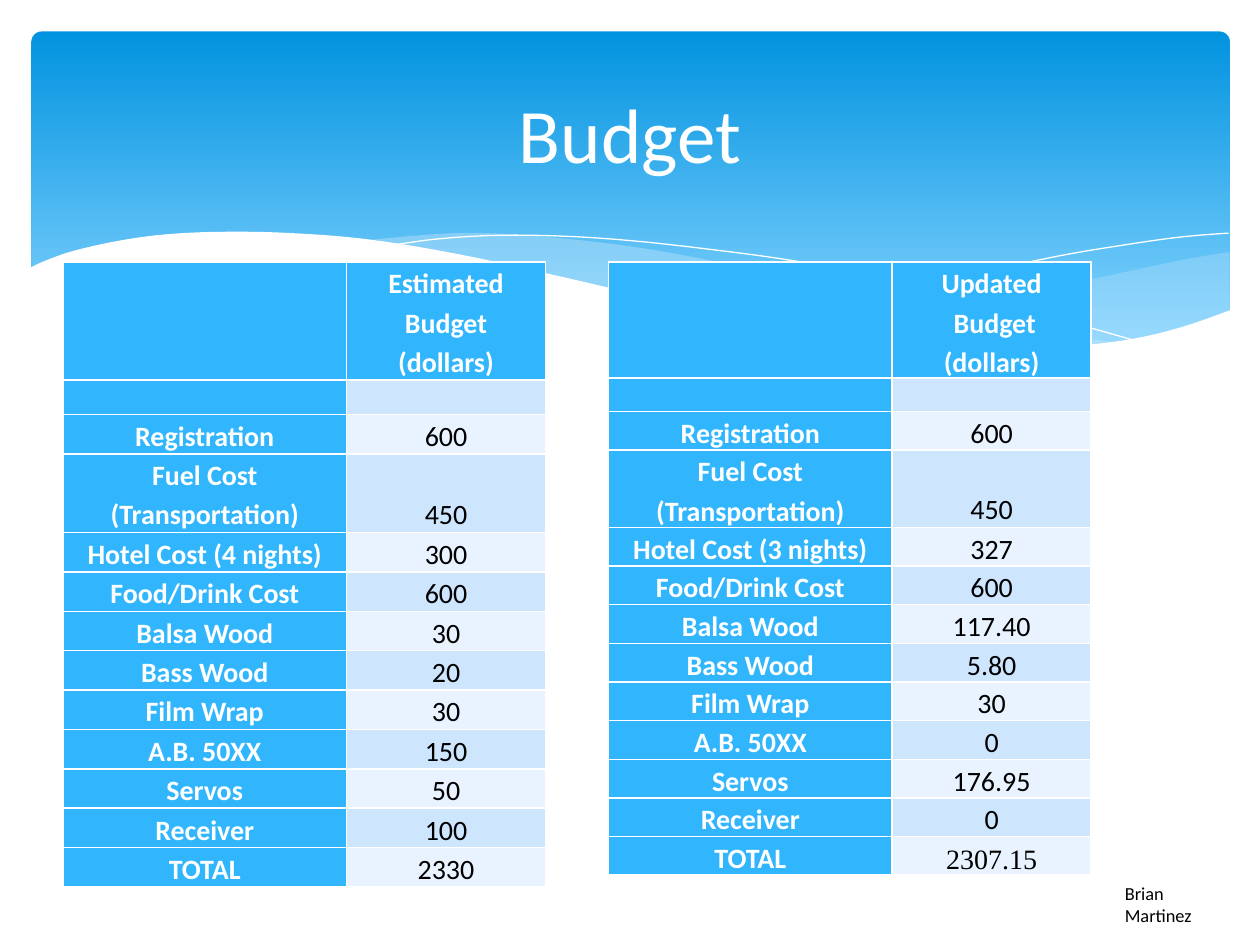
from lxml import etree
from pptx import Presentation
from pptx.dml.color import RGBColor
from pptx.enum.shapes import MSO_SHAPE
from pptx.enum.text import MSO_ANCHOR, PP_ALIGN
from pptx.oxml.ns import qn
from pptx.util import Inches, Pt

ROUNDED = MSO_SHAPE.ROUNDED_RECTANGLE
MIDDLE, BOTTOM, TOP = MSO_ANCHOR.MIDDLE, MSO_ANCHOR.BOTTOM, MSO_ANCHOR.TOP
LEFT, CENTER = PP_ALIGN.LEFT, PP_ALIGN.CENTER

COLORS = {
    "white": "FFFFFF", "black": "000000",
    "banner_top": "0293E0", "banner_bottom": "83D3FE", "wave": "C6E7FC",
    "label": "31B6FD", "odd_row": "CEE5FE", "even_row": "E8F3FF",
}

# Points, in inches, that the smooth edges of the waves pass through.
RIGHT_WAVE = [
    [(9.76, 2), (9.35, 2.07), (8.61, 2.23), (7.53, 2.48), (6.61, 2.65)],
    [(6.61, 2.65), (7.19, 2.72), (7.69, 2.77), (8.14, 2.78), (8.63, 2.75),
     (9.13, 2.67), (9.49, 2.57), (9.76, 2.47)],
]
MIDDLE_WAVE = [
    [(8.93, 2.73), (8.07, 2.6), (7.06, 2.4), (6.29, 2.22), (5.55, 2.05),
     (4.89, 1.94), (4.2, 1.87), (3.61, 1.85), (2.86, 1.91)],
    [(2.86, 1.91), (3.62, 2.03), (4.49, 2.22), (5.66, 2.48), (6.5, 2.64),
     (7.22, 2.74), (7.85, 2.78), (8.38, 2.78), (8.93, 2.73)],
]
WHITE_WAVE = [
    [(9.77, 2.46), (9.4, 2.59), (8.99, 2.69), (8.5, 2.75), (8.09, 2.77),
     (7.61, 2.75), (6.88, 2.68), (6.03, 2.54), (5.29, 2.39), (4.47, 2.2),
     (3.65, 2.02), (2.92, 1.9), (2.3, 1.85), (1.77, 1.84), (1.32, 1.86),
     (0.95, 1.91), (0.59, 1.99), (0.36, 2.07), (0.23, 2.13)],
    [(0.23, 3.29), (9.77, 3.29)],
]
LONG_LINE = [
    [(3.09, 1.95), (3.44, 1.9), (3.87, 1.87), (4.33, 1.87), (4.89, 1.9),
     (5.56, 1.97), (6.36, 2.08), (7.27, 2.26), (8.31, 2.51), (9.07, 2.72)],
]
RIGHT_LINE = [
    [(6.13, 2.57), (6.72, 2.41), (7.48, 2.23), (8.36, 2.04), (8.95, 1.94),
     (9.38, 1.88), (9.75, 1.85)],
]

ITEMS = ["Registration", "Fuel Cost (Transportation)", "Hotel Cost ({} nights)",
         "Food/Drink Cost", "Balsa Wood", "Bass Wood", "Film Wrap", "A.B. 50XX",
         "Servos", "Receiver", "TOTAL"]
ESTIMATED = ["600", "450", "300", "600", "30", "20", "30", "150", "50", "100", "2330"]
UPDATED = ["600", "450", "327", "600", "117.40", "5.80", "30", "0", "176.95", "0",
           "2307.15"]


def rgb(name):
    return RGBColor.from_string(COLORS[name])


def set_attributes(target, values):
    for name, value in values.items():
        setattr(target, name, value)


def write_text(text_frame, text, size, color, bold=False, font="Calibri",
               align=LEFT, spacing=None):
    """Fill a text frame, one paragraph for each line of the text."""
    for index, line in enumerate(text.split("\n")):
        paragraph = text_frame.add_paragraph() if index else text_frame.paragraphs[0]
        set_attributes(paragraph, {"alignment": align, "line_spacing": spacing})
        if line:
            run = paragraph.add_run()
            run.text = line
            set_attributes(run.font, {"size": Pt(size), "bold": bold, "name": font})
            run.font.color.rgb = rgb(color)
        else:
            # An empty cell keeps the line height of its neighbours.
            etree.SubElement(paragraph._p, qn("a:endParaRPr"), sz=str(size * 100))


def add_text(slide, box, text, size, color, anchor=TOP, align=LEFT):
    text_frame = slide.shapes.add_textbox(*map(Inches, box)).text_frame
    set_attributes(text_frame, {"word_wrap": True, "vertical_anchor": anchor})
    write_text(text_frame, text, size, color, align=align)


def smooth(knots, steps=6):
    """Return points of a Catmull-Rom curve through the knots."""
    if len(knots) < 3:
        return knots
    padded = [knots[0], *knots, knots[-1]]
    points = [knots[0]]
    for a, b, c, d in zip(padded, padded[1:], padded[2:], padded[3:]):
        for step in range(1, steps + 1):
            t = step / steps
            points.append(tuple(
                q + t / 2 * (r - p + t * (2 * p - 5 * q + 4 * r - s
                                          + t * (3 * q - p - 3 * r + s)))
                for p, q, r, s in zip(a, b, c, d)))
    return points


def add_curve(slide, edges, fill=None, opacity=100):
    """Draw a filled wave, or a white hairline if no fill is given."""
    points = [(Inches(x), Inches(y)) for edge in edges for x, y in smooth(edge)]
    builder = slide.shapes.build_freeform(*points[0])
    builder.add_line_segments(points[1:], close=fill is not None)
    shape = builder.convert_to_shape()
    shape.shadow.inherit = False
    if fill is None:
        shape.fill.background()
        shape.line.color.rgb = rgb("white")
        shape.line.width = Pt(0)
        return
    shape.line.fill.background()
    shape.fill.solid()
    shape.fill.fore_color.rgb = rgb(fill)
    if opacity < 100:
        color = shape._element.spPr.find(qn("a:solidFill"))[0]
        etree.SubElement(color, qn("a:alpha"), val=str(opacity * 1000))


def add_banner(slide, box):
    banner = slide.shapes.add_shape(ROUNDED, *map(Inches, box))
    banner.shadow.inherit = False
    banner.adjustments[0] = 0.03
    banner.line.fill.background()
    banner.fill.gradient()
    banner.fill.gradient_angle = 270
    stops = [(0, "banner_top"), (0.9, "banner_bottom")]
    for stop, (position, color) in zip(banner.fill.gradient_stops, stops):
        stop.position = position
        stop.color.rgb = rgb(color)
    add_curve(slide, RIGHT_WAVE, "wave", 29)
    add_curve(slide, MIDDLE_WAVE, "wave", 40)
    add_curve(slide, LONG_LINE)
    add_curve(slide, RIGHT_LINE)
    add_curve(slide, WHITE_WAVE, "white")


def add_budget_table(slide, box, heading, nights, amounts, row_height,
                     total_font="Calibri"):
    labels = [item.format(nights) for item in ITEMS]
    rows = [("", heading), ("", ""), *zip(labels, amounts)]
    frame = slide.shapes.add_table(len(rows), 2, *map(Inches, box))
    table = frame.table
    table.horz_banding = False
    for column, width in zip(table.columns, (2.25, 1.58)):
        column.width = Inches(width)
    lines = {0: 3.15, 3: 2.08}
    for row_index, row in enumerate(rows):
        table.rows[row_index].height = Inches(row_height * lines.get(row_index, 1))
        for column_index, text in enumerate(row):
            cell = table.cell(row_index, column_index)
            is_label = row_index == 0 or column_index == 0
            is_total = row_index == len(rows) - 1 and not is_label
            band = "odd_row" if row_index % 2 else "even_row"
            set_attributes(cell, {
                "vertical_anchor": BOTTOM, "margin_top": 0, "margin_bottom": 0,
                "margin_left": Inches(0.07), "margin_right": Inches(0.07)})
            cell.fill.solid()
            cell.fill.fore_color.rgb = rgb("label" if is_label else band)
            write_text(cell.text_frame, text, 16, "white" if is_label else "black",
                       bold=is_label, font=total_font if is_total else "Calibri",
                       align=CENTER, spacing=1.15)
    frame.height = Inches(box[3])


def main():
    presentation = Presentation()
    presentation.slide_width, presentation.slide_height = Inches(10), Inches(7.5)
    slide = presentation.slides.add_slide(presentation.slide_layouts[6])
    add_banner(slide, (0.25, 0.25, 9.51, 2.7))
    add_budget_table(slide, (0.5, 2.08, 3.83, 4.91), "Estimated Budget (dollars)",
                     4, ESTIMATED, 0.27)
    add_text(slide, (0.5, 0.37, 9, 1.37), "Budget", 44, "white", MIDDLE, CENTER)
    add_text(slide, (8.83, 6.95, 1.04, 0.28), "Brian Martinez", 10.5, "black")
    add_budget_table(slide, (4.83, 2.08, 3.83, 4.91), "Updated\n Budget (dollars)",
                     3, UPDATED, 0.26, "Times New Roman")
    presentation.save("out.pptx")


if __name__ == "__main__":
    main()
